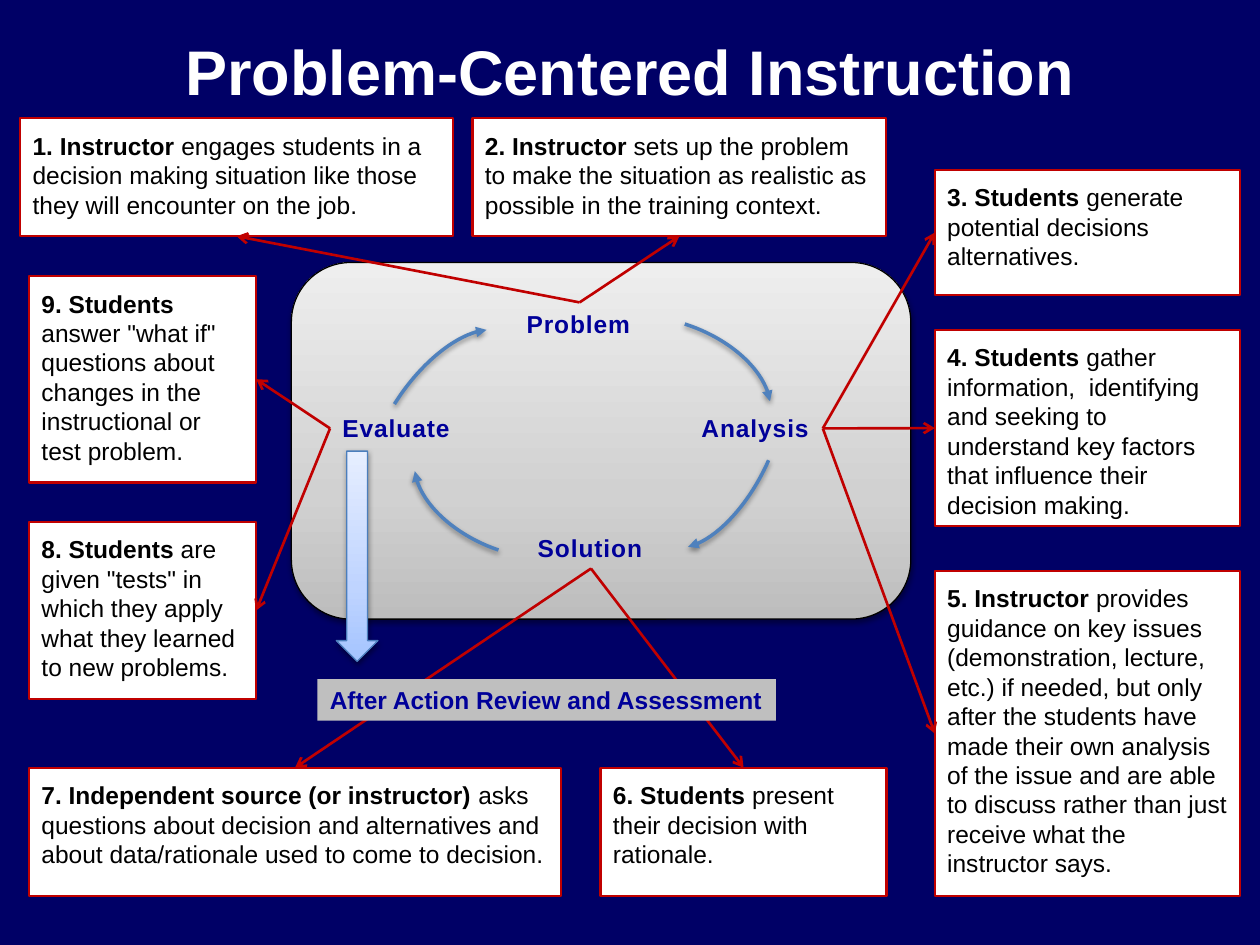
from copy import deepcopy

from lxml.etree import SubElement
from pptx import Presentation
from pptx.dml.color import RGBColor
from pptx.enum.shapes import MSO_CONNECTOR, MSO_SHAPE
from pptx.enum.text import MSO_ANCHOR, MSO_AUTO_SIZE, PP_ALIGN
from pptx.oxml.ns import qn
from pptx.util import Pt

NAVY = RGBColor(0x00, 0x00, 0x66)
INK_BLUE = RGBColor(0x00, 0x00, 0x99)
RED = RGBColor(0xC0, 0x00, 0x00)
ARC_BLUE = RGBColor(0x4F, 0x81, 0xBD)
ARROW_BLUE = RGBColor(0x4B, 0x7E, 0xBC)
GRAY = RGBColor(0xBF, 0xBF, 0xBF)
BLACK = RGBColor(0, 0, 0)
WHITE = RGBColor(255, 255, 255)
PANEL_STOPS = [(0, RGBColor(0xBD, 0xBD, 0xBD)), (0.35, RGBColor(0xD1, 0xD1, 0xD1)),
               (1, RGBColor(0xEE, 0xEE, 0xEE))]
ARROW_STOPS = [(0, RGBColor(0xA4, 0xC4, 0xFF)), (0.35, RGBColor(0xBF, 0xD4, 0xFF)),
               (1, RGBColor(0xE6, 0xEE, 0xFF))]

TITLE = "Problem-Centered Instruction"
BANNER = "After Action Review and Assessment"
TOP, LEFT, BOTTOM, RIGHT = range(4)  # connection sites of a rectangle

# stage: label box, point its arrows start from
STAGES = {
    "Problem": ((293.8, 172.8, 74.9, 24.2), (331.2, 172.8)),
    "Analysis": ((393.8, 232.6, 76.3, 24.2), (470.2, 244.8)),
    "Solution": ((300.2, 301, 74.9, 24.2), (337.7, 324.9)),
    "Evaluate": ((188.6, 232.6, 76.3, 24.2), (188.6, 244.8)),
}
# box, bold lead, text, stage, side the arrow meets
STEPS = [
    ((11.5, 67.5, 247.5, 67.5), "1. Instructor ",
     "engages students in a decision making situation like those they will "
     "encounter on the job.", "Problem", BOTTOM),
    ((270, 67.5, 236.5, 67.5), "2. Instructor ",
     "sets up the problem to make the situation as realistic as possible in "
     "the training context.", "Problem", BOTTOM),
    ((534.2, 97, 174.5, 71.8), "3. Students ",
     "generate potential decisions alternatives.", "Analysis", LEFT),
    ((534.2, 188.5, 174.5, 112.3), "4. Students ",
     "gather information,  identifying and seeking to understand key factors "
     "that influence their decision making.", "Analysis", LEFT),
    ((534.2, 326.2, 174.5, 186), "5. Instructor ",
     "provides guidance on key issues (demonstration, lecture, etc.) if needed, "
     "but only after the students have made their own analysis of the issue and "
     "are able to discuss rather than just receive what the instructor says.",
     "Analysis", LEFT),
    ((343.2, 438.7, 163.4, 73.5), "6. Students ",
     "present their decision with rationale.", "Solution", TOP),
    ((16.6, 438.7, 304, 73.5), "7. Independent source (or instructor) ",
     "asks questions about decision and alternatives and about data/rationale "
     "used to come to decision.", "Solution", TOP),
    ((16.6, 298.1, 129.8, 101.5), "8. Students ",
     "are given \"tests\" in which they apply what they learned to new problems.",
     "Evaluate", RIGHT),
    ((16.6, 157.7, 129.8, 118), "9. Students ",
     "answer \"what if\" questions about changes in the instructional or test "
     "problem.", "Evaluate", RIGHT),
]
# box, rotation
ARCS = [((326.9, 185, 115.9, 69.1), 21.6), ((344.9, 223.2, 127.4, 62.6), 116.5),
        ((234, 245.5, 115.9, 69.1), 202.7), ((190.8, 212.4, 127.4, 62.6), 304.7)]


def points(values):
    return [Pt(v) for v in values]


def add_run(p, text, size=14, bold=True, color=BLACK):
    r = p.add_run()
    r.text = text
    for name, value in {"name": "Arial", "size": Pt(size), "bold": bold}.items():
        setattr(r.font, name, value)
    r.font.color.rgb = color
    return r


def add_shape(kind, box, fill=None, line=None, width=1):
    """Add a preset shape; fill is a colour, a list of gradient stops or None."""
    sp = slide.shapes.add_shape(kind, *points(box))
    sp.shadow.inherit = False
    if fill is None:
        sp.fill.background()
    elif isinstance(fill, list):
        sp.fill.gradient()
        sp.fill.gradient_angle = 90
        stop_list = next(sp._element.spPr.iter(qn("a:gsLst")))
        stop_list.append(deepcopy(stop_list[-1]))
        for stop, (position, color) in zip(sp.fill.gradient_stops, fill):
            stop.position = position
            stop.color.rgb = color
    else:
        sp.fill.solid()
        sp.fill.fore_color.rgb = fill
    if line is None:
        sp.line.fill.background()
    else:
        sp.line.color.rgb = line
        sp.line.width = Pt(width)
    return sp


def add_shadow(sp):
    effects = sp._element.spPr.find(qn("a:effectLst"))
    shadow = SubElement(effects, qn("a:outerShdw"), blurRad=str(Pt(3.1)),
                        dist=str(Pt(1.6)), dir="5400000", rotWithShape="0")
    color = SubElement(shadow, qn("a:srgbClr"), val="000000")
    SubElement(color, qn("a:alpha"), val="38000")


def add_arrowhead(sp, kind):
    SubElement(sp.line._get_or_add_ln(), qn("a:tailEnd"), type=kind)


def fit_to_text(tf):
    tf.word_wrap = False
    tf.auto_size = MSO_AUTO_SIZE.SHAPE_TO_FIT_TEXT
    tf.vertical_anchor = MSO_ANCHOR.TOP
    tf.paragraphs[0].alignment = PP_ALIGN.LEFT


prs = Presentation()
prs.slide_width, prs.slide_height = points((720, 540))
slide = prs.slides.add_slide(prs.slide_layouts[5])
slide.background.fill.solid()
slide.background.fill.fore_color.rgb = NAVY

title = slide.shapes.title
title.left, title.top, title.width, title.height = points((36, 5.8, 648, 68.4))
title.text_frame.vertical_anchor = MSO_ANCHOR.MIDDLE
title.text_frame.paragraphs[0].alignment = PP_ALIGN.CENTER
add_run(title.text_frame.paragraphs[0], TITLE, size=36, color=WHITE)

add_shadow(add_shape(MSO_SHAPE.ROUNDED_RECTANGLE, (166.5, 150, 354, 203.8),
                     PANEL_STOPS, BLACK, 0.75))

for box, lead, text, stage, side in STEPS:
    sp = add_shape(MSO_SHAPE.RECTANGLE, box, WHITE, RED, 1.25)
    tf = sp.text_frame
    tf.word_wrap = True
    tf.vertical_anchor = MSO_ANCHOR.TOP
    for margin in ("left", "top", "right", "bottom"):
        setattr(tf, f"margin_{margin}", Pt(7.2))
    p = tf.paragraphs[0]
    p.alignment = PP_ALIGN.LEFT
    add_run(p, lead)
    add_run(p, text, bold=False)

    start = points(STAGES[stage][1])
    arrow = slide.shapes.add_connector(MSO_CONNECTOR.STRAIGHT, *start, *start)
    arrow.end_connect(sp, side)
    arrow.line.color.rgb = RED
    arrow.line.width = Pt(1.5)
    add_arrowhead(arrow, "arrow")
    SubElement(arrow._element.spPr, qn("a:effectLst"))

for label, (box, _) in STAGES.items():
    tf = slide.shapes.add_textbox(*points(box)).text_frame
    fit_to_text(tf)
    r = add_run(tf.paragraphs[0], label, color=INK_BLUE)
    r.font._element.set("spc", "50")

for box, rotation in ARCS:
    arc = add_shape(MSO_SHAPE.ARC, box, line=ARC_BLUE, width=2)
    arc.rotation = rotation
    arc.adjustments[0], arc.adjustments[1] = 155.434, 209.063
    add_arrowhead(arc, "triangle")
    add_shadow(arc)

add_shadow(add_shape(MSO_SHAPE.DOWN_ARROW, (192.2, 257.8, 23.8, 120.2),
                     ARROW_STOPS, ARROW_BLUE, 0.75))

banner = add_shape(MSO_SHAPE.RECTANGLE, (181.4, 388.1, 262.1, 23.8), GRAY)
fit_to_text(banner.text_frame)
add_run(banner.text_frame.paragraphs[0], BANNER, color=INK_BLUE)

prs.save("out.pptx")
